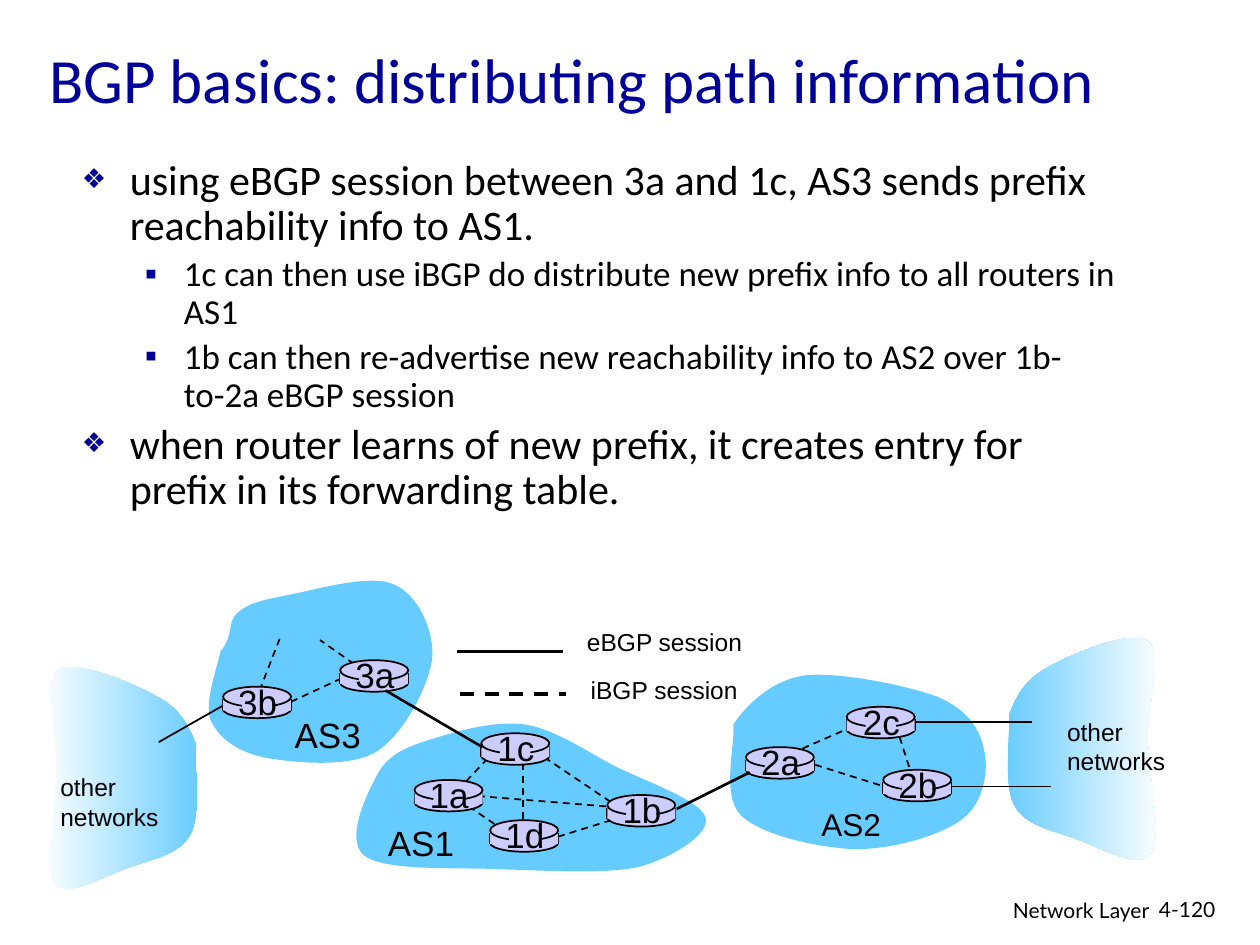
"""Build the BGP path information slide."""
from lxml.etree import Element, SubElement
from pptx import Presentation
from pptx.dml.color import RGBColor
from pptx.enum.dml import MSO_LINE as Dash
from pptx.enum.shapes import MSO_CONNECTOR as Link, MSO_SHAPE as Kind
from pptx.enum.text import MSO_ANCHOR as Anchor, MSO_AUTO_SIZE as Fit, PP_ALIGN as Align
from pptx.oxml.ns import qn
from pptx.util import Inches, Pt

HUE = {"ink": "000000", "navy": "000099", "sky": "66CCFF", "disc": "CCCCFF", "white": "FFFFFF"}
TITLE = "BGP basics: distributing path information"
BODY = [
    (0, "using eBGP session between 3a and 1c, AS3 sends prefix reachability info to AS1."),
    (1, "1c can then use iBGP do distribute new prefix info to all routers in AS1"),
    (1, "1b can then re-advertise new reachability info to AS2 over 1b-to-2a eBGP session"),
    (0, "when router learns of new prefix, it creates entry for prefix in its forwarding table."),
]
LEVELS = [
    {"size": 24, "left": 0.38, "hang": 0.38, "mark": "❖", "pct": 65},
    {"size": 20, "left": 0.81, "hang": 0.31, "mark": "▪", "pct": 100},
]
CLOUDS = {
    "AS3": [(1.75, 5.17), (1.86, 5.04, 1.8, 4.93, 1.89, 4.86), (1.98, 4.78, 2.1, 4.76, 2.3, 4.72),
            (2.51, 4.68, 2.94, 4.55, 3.13, 4.64), (3.32, 4.72, 3.45, 5.01, 3.43, 5.23),
            (3.4, 5.45, 3.2, 5.84, 2.98, 5.97), (2.76, 6.1, 2.3, 6.05, 2.09, 6.01),
            (1.87, 5.96, 1.73, 5.85, 1.67, 5.71), (1.62, 5.57, 1.73, 5.28, 1.75, 5.17)],
    "AS1": [(3.01, 6.12), (3.11, 5.96, 3.28, 5.91, 3.48, 5.85), (3.67, 5.79, 3.94, 5.72, 4.17, 5.75),
            (4.4, 5.79, 4.62, 5.94, 4.86, 6.07), (5.09, 6.19, 5.57, 6.35, 5.6, 6.49),
            (5.64, 6.62, 5.33, 6.81, 5.07, 6.88), (4.8, 6.94, 4.36, 6.91, 4, 6.9),
            (3.64, 6.88, 3.06, 6.92, 2.89, 6.79), (2.73, 6.66, 2.92, 6.28, 3.01, 6.12)],
    "AS2": [(5.82, 5.75), (5.93, 5.59, 6.12, 5.4, 6.39, 5.36), (6.66, 5.33, 7.2, 5.44, 7.44, 5.53),
            (7.68, 5.63, 7.78, 5.79, 7.81, 5.95), (7.85, 6.11, 7.81, 6.37, 7.64, 6.5),
            (7.47, 6.63, 7.09, 6.74, 6.79, 6.74), (6.5, 6.73, 6.04, 6.63, 5.88, 6.47),
            (5.72, 6.31, 5.84, 5.9, 5.82, 5.75)],
}
OUTER = [(1.55, 5.9), (1.49, 5.74, 1.41, 5.61, 1.23, 5.52), (1.05, 5.42, 0.58, 5.22, 0.45, 5.32),
         (0.32, 5.41, 0.46, 5.82, 0.45, 6.1), (0.45, 6.39, 0.33, 6.88, 0.43, 7.01),
         (0.52, 7.14, 0.83, 6.95, 1.01, 6.89), (1.19, 6.82, 1.42, 6.79, 1.51, 6.62),
         (1.6, 6.46, 1.54, 6.05, 1.55, 5.9)]
FLIP, RISE, GRAIN = 9.56, 0.23, 100
ROUTERS = {"3b": (1.77, 5.45), "3a": (2.7, 5.24), "1c": (3.82, 5.82), "1a": (3.29, 6.19),
           "1d": (3.89, 6.51), "1b": (4.82, 6.31), "2a": (5.92, 5.93), "2c": (6.72, 5.61),
           "2b": (7.01, 6.11)}
IBGP = [(2.31, 5.57, 2.74, 5.37), (2.81, 5.27, 2.54, 5.08), (2.22, 5.07, 2.06, 5.48),
        (3.87, 6.02, 3.7, 6.2), (4.15, 6.06, 4.15, 6.56), (4.32, 6.01, 4.87, 6.38),
        (4.85, 6.51, 4.43, 6.64), (4.81, 6.4, 3.82, 6.32), (3.72, 6.4, 3.94, 6.55),
        (6.28, 5.98, 6.76, 5.77), (6.47, 6.07, 7.01, 6.24), (7.14, 5.85, 7.22, 6.1)]
EBGP = [(3.06, 5.48, 3.83, 5.93), (5.37, 6.42, 5.95, 6.13)]
EXITS = [(7.26, 5.73, 8.19, 5.73, 0.75), (7.53, 6.24, 8.34, 6.24, 0.75), (1.77, 5.6, 1.26, 5.89, 1)]
KEYS = [(3.63, 5.17, 4.47, 5.17, False), (3.65, 5.51, 4.49, 5.51, True)]
LABELS = [
    ("AS3", 2.24, 5.61, 0.73, 0.43, 20), ("AS2", 6.42, 6.34, 0.67, 0.4, 18),
    ("AS1", 2.98, 6.47, 0.73, 0.43, 20), ("other\nnetworks", 0.38, 6.08, 0.98, 0.57, 14),
    ("other\nnetworks", 8.37, 5.64, 0.98, 0.57, 14),
    ("eBGP session", 4.56, 4.93, 1.43, 0.33, 14), ("iBGP session", 4.59, 5.31, 1.37, 0.33, 14),
]


def tint(name):
    return RGBColor.from_string(HUE[name])


def place(shape, *box):
    shape.left, shape.top, shape.width, shape.height = map(Inches, box)


def style(para, size, face, hue="ink"):
    for run in para.runs:
        run.font.size, run.font.name = Pt(size), face
        run.font.color.rgb = tint(hue)


def label(pool, text, box, size, face="Arial", align=Align.LEFT, wrap=False):
    frame = pool.add_textbox(*map(Inches, box)).text_frame
    frame.word_wrap = wrap
    frame.text = text
    for para in frame.paragraphs:
        para.alignment = align
        style(para, size, face)


def wire(pool, ends, width=1, dash=False):
    line = pool.add_connector(Link.STRAIGHT, *map(Inches, ends))
    line.line.color.rgb, line.line.width = tint("ink"), Pt(width)
    if dash:
        line.line.dash_style = Dash.DASH
    SubElement(line._element.spPr, qn("a:effectLst"))


def solid(pool, kind, box, edge=False):
    shape = pool.add_shape(kind, *map(Inches, box))
    shape.shadow.inherit = False
    shape.fill.solid()
    shape.fill.fore_color.rgb = tint("disc")
    if edge:
        shape.line.color.rgb, shape.line.width = tint("ink"), Pt(1)
    else:
        shape.line.fill.background()


def trace(curve):
    """List the knots and handles as points."""
    flat = [n for seg in curve for n in seg]
    return list(zip(flat[::2], flat[1::2]))


def bend(shape):
    """Join each three straight segments into one cubic curve."""
    legs = list(shape._element.iter(qn("a:lnTo")))
    for n in range(0, len(legs), 3):
        arc = Element(qn("a:cubicBezTo"))
        legs[n].addprevious(arc)
        for leg in legs[n:n + 3]:
            arc.append(leg[0])
            leg.getparent().remove(leg)


def cloud(pool, dots, blend=None):
    dots = [(round(x * GRAIN), round(y * GRAIN)) for x, y in dots]
    pen = pool.build_freeform(*dots[0], scale=Inches(1) / GRAIN)
    pen.add_line_segments(dots[1:], close=True)
    shape = pen.convert_to_shape()
    bend(shape)
    shape.shadow.inherit = False
    shape.line.fill.background()
    if blend:
        shape.fill.gradient()
        shape.fill.gradient_angle = 0
        for stop, hue in zip(shape.fill.gradient_stops, blend):
            stop.color.rgb = tint(hue)
    else:
        shape.fill.solid()
        shape.fill.fore_color.rgb = tint("sky")


def router(pool, name, x, y):
    kit = pool.add_group_shape().shapes
    solid(kit, Kind.OVAL, (x, y + 0.11, 0.54, 0.14), True)
    for side in (x, x + 0.54):
        wire(kit, (side, y + 0.1, side, y + 0.19))
    solid(kit, Kind.RECTANGLE, (x, y + 0.1, 0.54, 0.09))
    solid(kit, Kind.OVAL, (x, y, 0.54, 0.16), True)
    solid(kit, Kind.RECTANGLE, (x + 0.15, y + 0.02, 0.24, 0.2))
    label(kit, name, (x + 0.02, y - 0.1, 0.51, 0.43), 20, align=Align.CENTER)


def fill_body(body):
    place(body, 0.55, 1.21, 8.5, 2.59)
    frame = body.text_frame
    frame.auto_size = Fit.NONE
    frame.text = "\n".join(text for _, text in BODY)
    for para, (depth, _) in zip(frame.paragraphs, BODY):
        look = LEVELS[depth]
        para.level, para.line_spacing = depth, 0.9
        para.space_before = Pt(look["size"] * 0.2)
        style(para, look["size"], "Calibri")
        props = para._p.get_or_add_pPr()
        props.set("marL", str(Inches(look["left"])))
        props.set("indent", str(-Inches(look["hang"])))
        SubElement(SubElement(props, qn("a:buClr")), qn("a:srgbClr"), val=HUE["navy"])
        SubElement(props, qn("a:buSzPct"), val=str(look["pct"] * 1000))
        SubElement(props, qn("a:buChar"), char=look["mark"])


def main():
    deck = Presentation()
    deck.slide_width, deck.slide_height = Inches(10), Inches(7.5)
    slide = deck.slides.add_slide(deck.slide_layouts[1])
    pool = slide.shapes
    head = pool.title
    place(head, 0.29, 0, 8.79, 1.25)
    head.text_frame.text = TITLE
    head.text_frame.vertical_anchor = Anchor.MIDDLE
    head.text_frame.paragraphs[0].alignment = Align.LEFT
    style(head.text_frame.paragraphs[0], 36, "Calibri", "navy")
    fill_body(slide.placeholders[1])

    west = trace(OUTER)
    cloud(pool, west, ("white", "sky"))
    cloud(pool, [(FLIP - x, y - RISE) for x, y in west], ("sky", "white"))
    for curve in CLOUDS.values():
        cloud(pool, trace(curve))
    for ends in IBGP:
        wire(pool, ends, dash=True)
    for *ends, width in EXITS:
        wire(pool, ends, width)
    for name, spot in ROUTERS.items():
        router(pool, name, *spot)
    for ends in EBGP:
        wire(pool, ends, 1.5)
    for *ends, dash in KEYS:
        wire(pool, ends, 2, dash)
    for text, *box, size in LABELS:
        label(pool, text, box, size)
    label(pool, "Network Layer", (6.05, 7.07, 3.17, 0.31), 12, "Lato", Align.RIGHT, True)
    label(pool, "4-120", (9.1, 7.07, 0.74, 0.3), 12, "Lato", wrap=True)
    deck.save("out.pptx")


if __name__ == "__main__":
    main()
